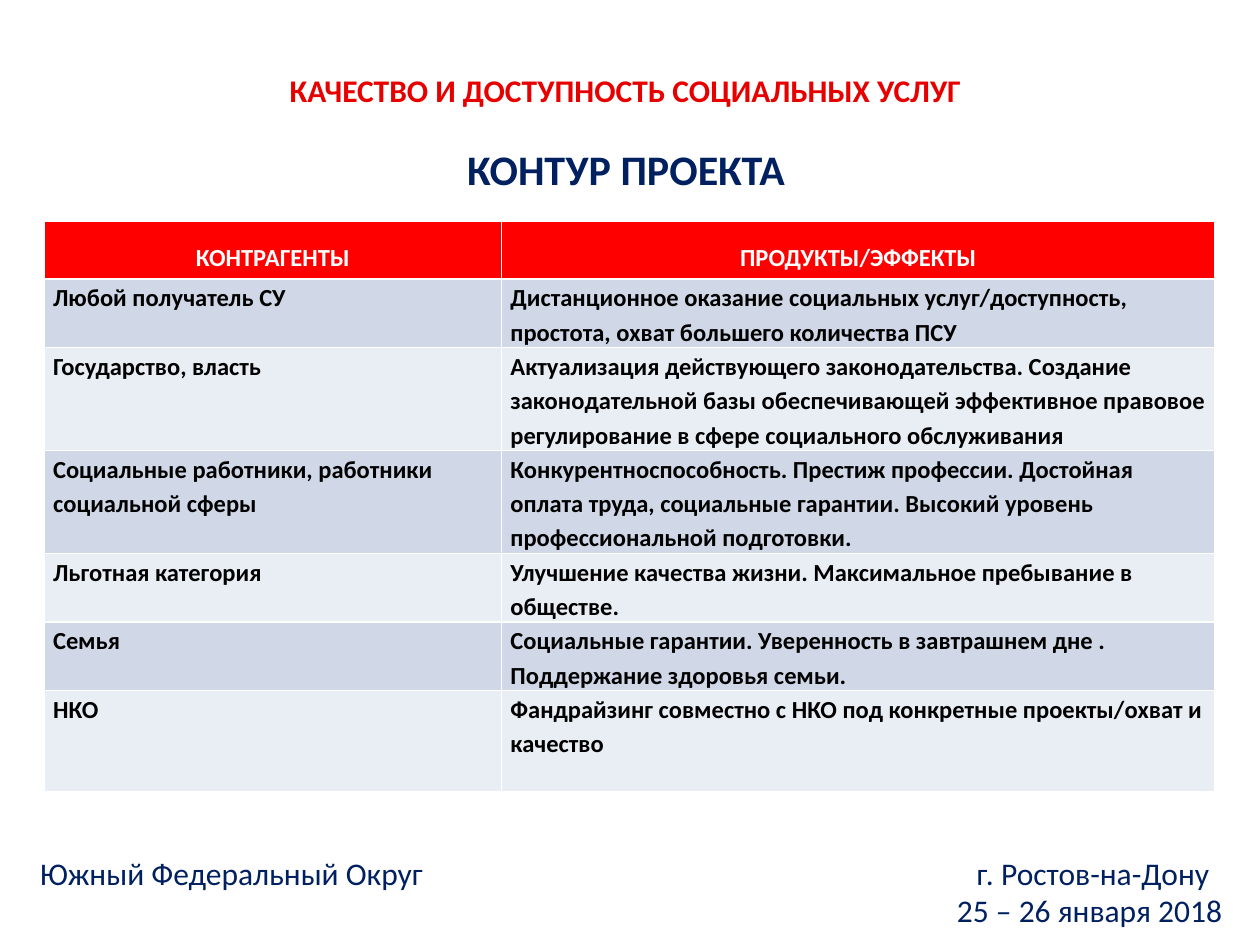
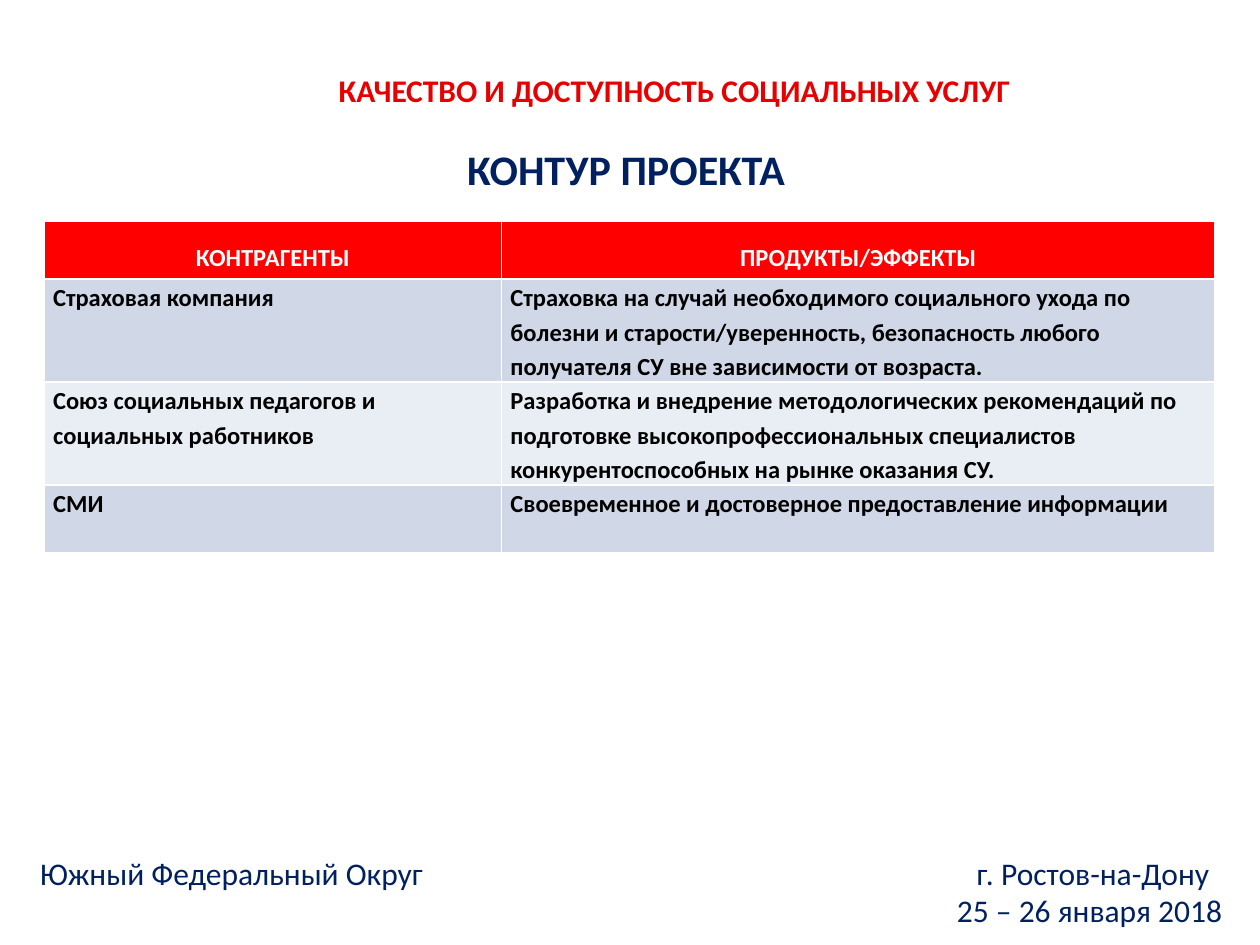
from lxml import etree
from pptx import Presentation
from pptx.dml.color import RGBColor
from pptx.enum.text import MSO_ANCHOR, MSO_AUTO_SIZE, PP_ALIGN
from pptx.oxml.ns import qn
from pptx.util import Cm, Pt

CENTER, LEFT, RIGHT = PP_ALIGN.CENTER, PP_ALIGN.LEFT, PP_ALIGN.RIGHT
TOP, MIDDLE = MSO_ANCHOR.TOP, MSO_ANCHOR.MIDDLE
NO_AUTOFIT = MSO_AUTO_SIZE.NONE

NAVY = RGBColor(0x00, 0x20, 0x60)
HEADING_RED = RGBColor(0xE6, 0x00, 0x00)
HEADER_RED = RGBColor(0xFF, 0x00, 0x00)
WHITE = RGBColor(0xFF, 0xFF, 0xFF)
BLACK = RGBColor(0x00, 0x00, 0x00)
BANDS = [RGBColor(0xD0, 0xD8, 0xE8), RGBColor(0xE9, 0xED, 0xF4)]

FONT = "Calibri"
HEADERS = ("КОНТРАГЕНТЫ", "ПРОДУКТЫ/ЭФФЕКТЫ")
COLUMN_WIDTHS = (Cm(9.22), Cm(14.38))
HEADER_HEIGHT = Cm(1.12)
TWO_LINES, THREE_LINES = Cm(1.36), Cm(2.04)

SLIDES = [
    (Cm(3.53), [
        ("Любой получатель СУ",
         "Дистанционное оказание социальных услуг/доступность, простота, "
         "охват большего количества ПСУ", TWO_LINES),
        ("Государство, власть",
         "Актуализация действующего законодательства. Создание законодательной базы "
         "обеспечивающей эффективное правовое регулирование в сфере социального "
         "обслуживания", THREE_LINES),
        ("Социальные работники, работники социальной сферы",
         "Конкурентноспособность. Престиж профессии. Достойная оплата труда, социальные "
         "гарантии. Высокий уровень профессиональной подготовки.", THREE_LINES),
        ("Льготная категория",
         "Улучшение качества жизни. Максимальное пребывание в обществе.", TWO_LINES),
        ("Семья",
         "Социальные гарантии. Уверенность в завтрашнем дне . "
         "Поддержание здоровья семьи.", TWO_LINES),
        ("НКО",
         "Фандрайзинг совместно с НКО под конкретные проекты/охват и качество",
         THREE_LINES),
    ]),
    (Cm(4.52), [
        ("Страховая компания",
         "Страховка на случай необходимого социального ухода по болезни и "
         "старости/уверенность, безопасность любого получателя СУ вне зависимости "
         "от возраста.", THREE_LINES),
        ("Союз социальных педагогов и социальных работников",
         "Разработка и внедрение методологических рекомендаций по подготовке "
         "высокопрофессиональных специалистов конкурентоспособных на рынке "
         "оказания СУ.", THREE_LINES),
        ("СМИ",
         "Своевременное и достоверное предоставление информации", TWO_LINES),
    ]),
]


def write(paragraph, text, size, color, bold=False, alignment=LEFT, spacing=1.0):
    paragraph.alignment = alignment
    paragraph.line_spacing = spacing
    run = paragraph.add_run()
    run.text = text
    run.font.name = FONT
    run.font.size = Pt(size)
    run.font.bold = bold
    run.font.color.rgb = color


def place(shape, left, top, width, height, anchor):
    shape.left, shape.top, shape.width, shape.height = left, top, width, height
    frame = shape.text_frame
    frame.word_wrap = True
    frame.auto_size = NO_AUTOFIT
    frame.vertical_anchor = anchor
    return frame


presentation = Presentation()
presentation.slide_width = Cm(25.4)
presentation.slide_height = Cm(19.05)
title_only = presentation.slide_layouts[5]

for heading_left, rows in SLIDES:
    slide = presentation.slides.add_slide(title_only)

    title = place(slide.shapes.title, Cm(6.27), Cm(2.77), Cm(12.7), Cm(1.27), TOP)
    write(title.paragraphs[0], "КОНТУР ПРОЕКТА", 24, NAVY, True, CENTER)

    table_height = HEADER_HEIGHT + sum(height for *_, height in rows)
    table = slide.shapes.add_table(len(rows) + 1, 2, Cm(0.89), Cm(4.47),
                                   sum(COLUMN_WIDTHS), table_height).table
    for column, width in zip(table.columns, COLUMN_WIDTHS):
        column.width = width

    table.rows[0].height = HEADER_HEIGHT
    for cell, text in zip(table.rows[0].cells, HEADERS):
        cell.fill.solid()
        cell.fill.fore_color.rgb = HEADER_RED
        write(cell.text_frame.paragraphs[0], text, 14, WHITE, True, CENTER, 1.5)

    for index, (agent, effect, height) in enumerate(rows):
        row = table.rows[index + 1]
        row.height = height
        for cell, text in zip(row.cells, (agent, effect)):
            cell.fill.solid()
            cell.fill.fore_color.rgb = BANDS[index % 2]
            cell.margin_left = cell.margin_right = Cm(0.18)
            cell.margin_top = cell.margin_bottom = 0
            write(cell.text_frame.paragraphs[0], text, 14, BLACK, True, spacing=1.15)

    footer_box = slide.shapes.add_textbox(0, 0, 0, 0)
    footer = place(footer_box, Cm(0.33), Cm(17.22), Cm(24.56), Cm(1.5), MIDDLE)
    footer.margin_left = Cm(0.48)
    place_line = footer.paragraphs[0]
    write(place_line, "Южный Федеральный Округ\tг. Ростов-на-Дону", 18, NAVY)
    tabs = etree.SubElement(place_line._p.get_or_add_pPr(), qn("a:tabLst"))
    etree.SubElement(tabs, qn("a:tab"), pos=str(Cm(23.57)), algn="r")
    write(footer.add_paragraph(), "25 – 26 января 2018", 18, NAVY, alignment=RIGHT)

    heading_box = slide.shapes.add_textbox(0, 0, 0, 0)
    heading = place(heading_box, heading_left, Cm(1.32), Cm(18.16), Cm(0.99), MIDDLE)
    write(heading.paragraphs[0], "КАЧЕСТВО И ДОСТУПНОСТЬ СОЦИАЛЬНЫХ УСЛУГ",
          18, HEADING_RED, True, CENTER)

presentation.save("out.pptx")
